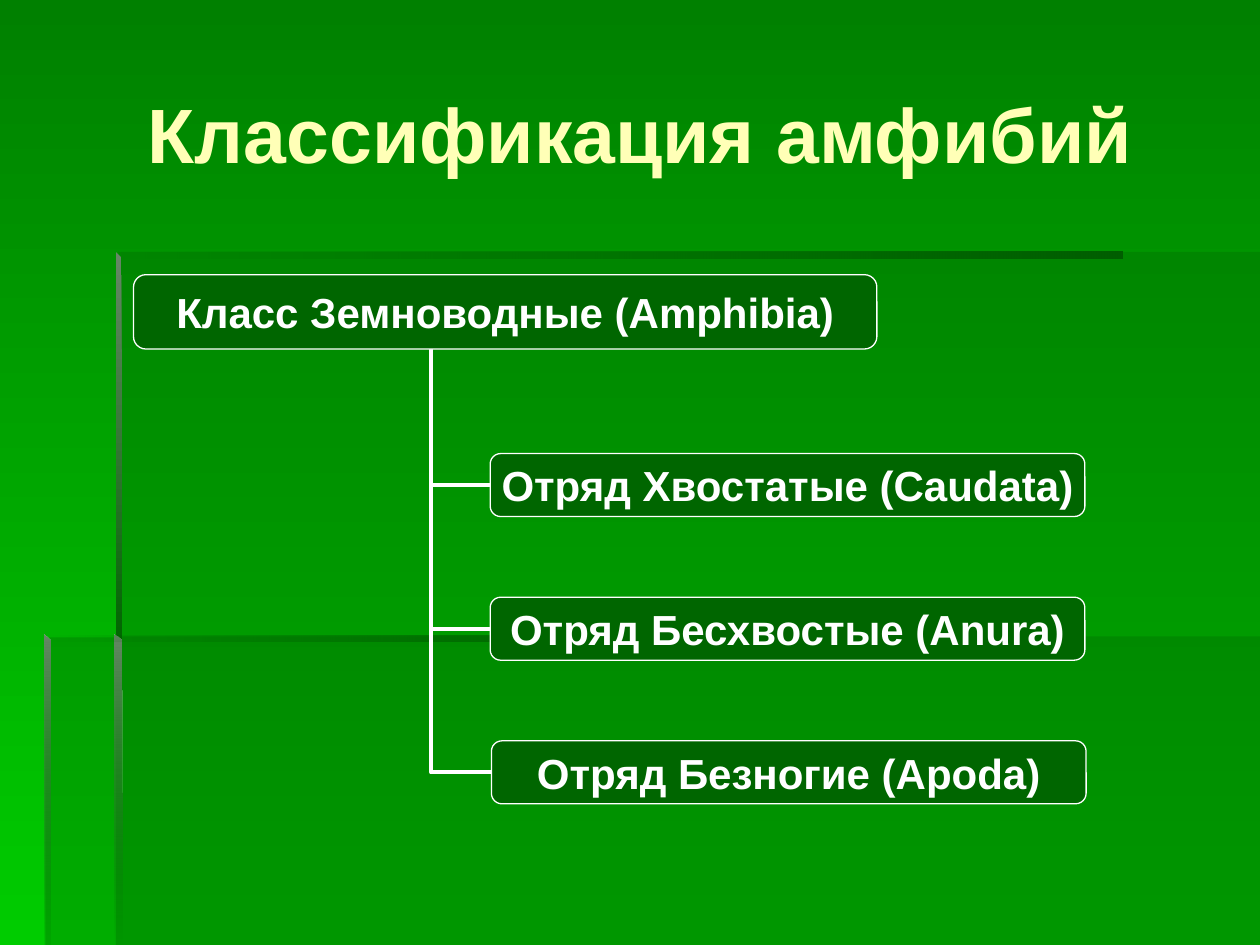
from pptx import Presentation, util as u
from pptx.dml.color import RGBColor
from pptx.enum import shapes, text
from pptx.oxml.ns import qn
from lxml import etree

deck = Presentation()
deck.slide_width, deck.slide_height = u.Inches(10), u.Inches(7.5)
slide = deck.slides.add_slide(deck.slide_layouts[6])
hue = RGBColor.from_string
DARK, EDGE, PALE, WHITE = "006600", "005E00", "668666", "FFFFFF"


def blend(fill, tones, angle):
    fill.gradient()
    fill.gradient_angle = angle
    for stop, tone in zip(fill.gradient_stops, tones):
        stop.color.rgb = hue(tone)


def label(shape, words, size, tone, wrap):
    frame = shape.text_frame
    form = {"vertical_anchor": text.MSO_ANCHOR.MIDDLE, "word_wrap": wrap}
    for key, value in form.items():
        setattr(frame, key, value)
    para = frame.paragraphs[0]
    para.text = words
    para.alignment = text.PP_ALIGN.CENTER
    form = {"name": "Arial", "size": u.Pt(size), "bold": True}
    for key, value in form.items():
        setattr(para.runs[0].font, key, value)
    para.runs[0].font.color.rgb = hue(tone)


# Background, angles run counter-clockwise: 270 is downwards
blend(slide.background.fill, ("008000", "00CC00"), 270)

# Backdrop: outline, tones, angle, opacity of each tone in percent
parts = [
    ([(0.92, 5.05), (0.92, 7.5), (10, 7.5), (10, 5.05)], [DARK], 0, [30]),
    ([(0.94, 5.06), (0.36, 5.06), (0.36, 7.5), (10, 7.5), (10, 2), (0.94, 2)],
     [DARK], 0, [30]),
    ([(0.92, 2), (0.92, 2.05), (8.91, 2.05), (8.91, 2)], [DARK, EDGE], 0, [0, 100]),
    ([(0.92, 2), (0.92, 5.1), (0.97, 5.1), (0.96, 2.04)], [PALE, DARK], 270, [100, 100]),
    ([(0.91, 7.5), (0.97, 7.5), (0.96, 5.08), (0.91, 5.04)], [PALE, DARK], 270, [100, 0]),
    ([(0.35, 5.04), (0.35, 5.09), (5.35, 5.09), (5.35, 5.04)], [DARK, EDGE], 0, [0, 100]),
    ([(0.35, 5.04), (0.35, 7.5), (0.4, 7.5), (0.4, 5.09)], [PALE, DARK], 270, [100, 10]),
]
for dots, tones, angle, shares in parts:
    dots = [(u.Inches(x), u.Inches(y)) for x, y in dots]
    pen = slide.shapes.build_freeform(*dots[0])
    pen.add_line_segments(dots[1:], close=True)
    part = pen.convert_to_shape()
    part.shadow.inherit = False
    if len(tones) > 1:
        blend(part.fill, tones, angle)
    else:
        part.fill.solid()
        part.fill.fore_color.rgb = hue(tones[0])
    part.line.fill.background()
    for node, share in zip(part._element.spPr.iter(qn("a:srgbClr")), shares):
        if share < 100:
            etree.SubElement(node, qn("a:alpha")).set("val", str(share * 1000))

# Title
title = slide.shapes.add_textbox(*map(u.Inches, (0.5, 0.27, 9.17, 1.57)))
label(title, "Классификация амфибий", 44, "FFFFB7", True)

# Tree: the class on top, orders at equal steps below
TOP, STEP, TALL = 3.6, 1.14, 0.5
ROOT, STEM = (1.06, 2.18, 5.9, 0.59), 3.42
names = ["Отряд Хвостатые (Caudata)", "Отряд Бесхвостые (Anura)", "Отряд Безногие (Apoda)"]
lefts = [3.89, 3.89, 3.9]
boxes = [(ROOT, "Класс Земноводные (Amphibia)")]
boxes += [((left, TOP + STEP * row, 4.72, TALL), name)
          for row, (left, name) in enumerate(zip(lefts, names))]

# Elbows from each order back to the class, last one at the back
for (left, top, _, tall), _ in reversed(boxes[1:]):
    ends = map(u.Inches, (STEM, ROOT[1] + ROOT[3], left, top + tall / 2))
    link = slide.shapes.add_connector(shapes.MSO_CONNECTOR.ELBOW, *ends)
    link.line.color.rgb = hue(WHITE)
    link.line.width = u.Pt(2.25)
    props = link._element.spPr
    props.find(qn("a:prstGeom")).set("prst", "bentConnector2")
    props.find(qn("a:xfrm")).set("rot", str(180 * 60000))
    etree.SubElement(props, qn("a:effectLst"))

# Boxes
for place, name in boxes:
    box = slide.shapes.add_shape(shapes.MSO_SHAPE.ROUNDED_RECTANGLE, *map(u.Inches, place))
    box.shadow.inherit = False
    box.adjustments[0] = 0.167
    box.fill.solid()
    box.fill.fore_color.rgb = hue(DARK)
    box.line.color.rgb = hue(WHITE)
    box.line.width = u.Pt(0.75)
    label(box, name, 24, WHITE, False)

deck.save("out.pptx")
